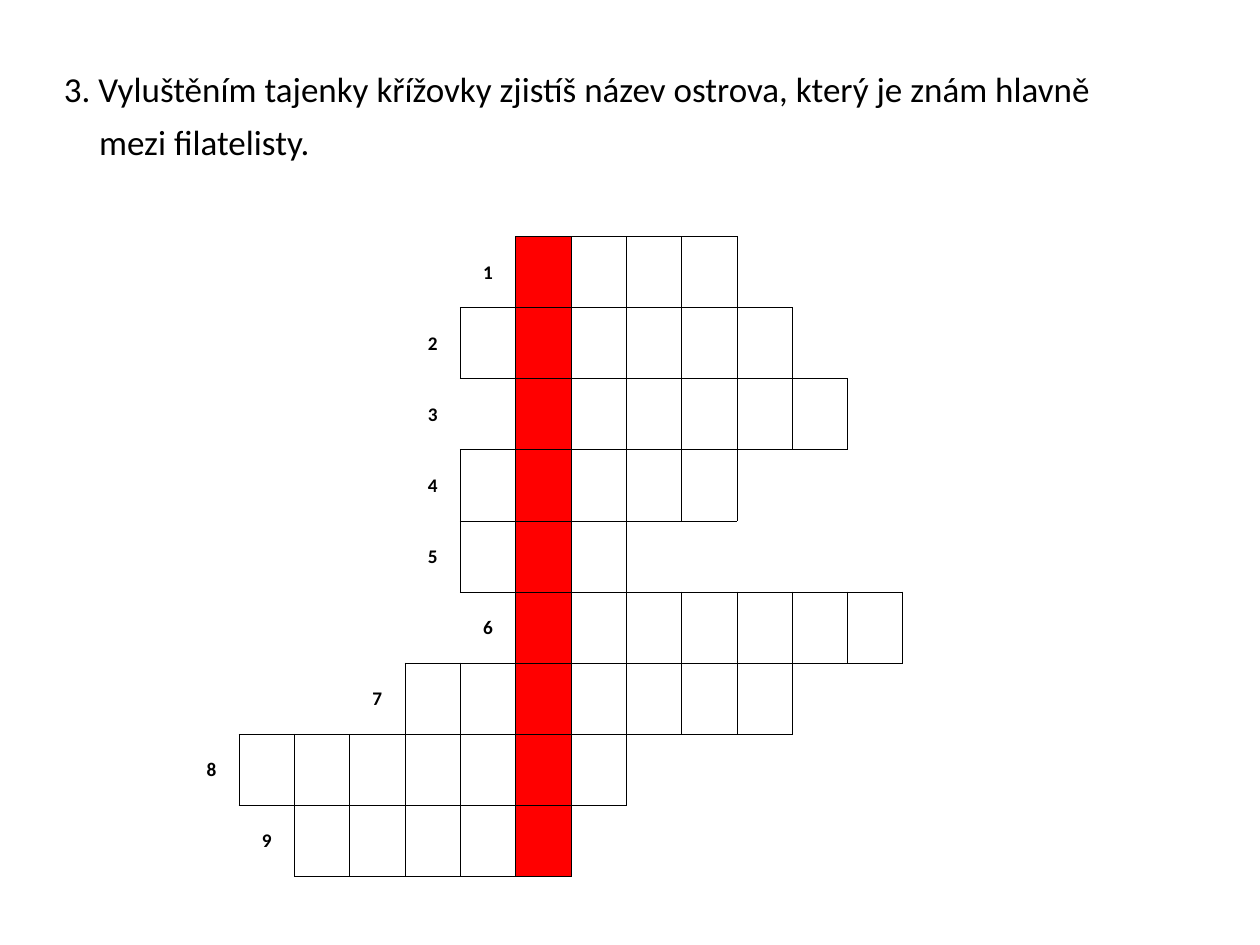
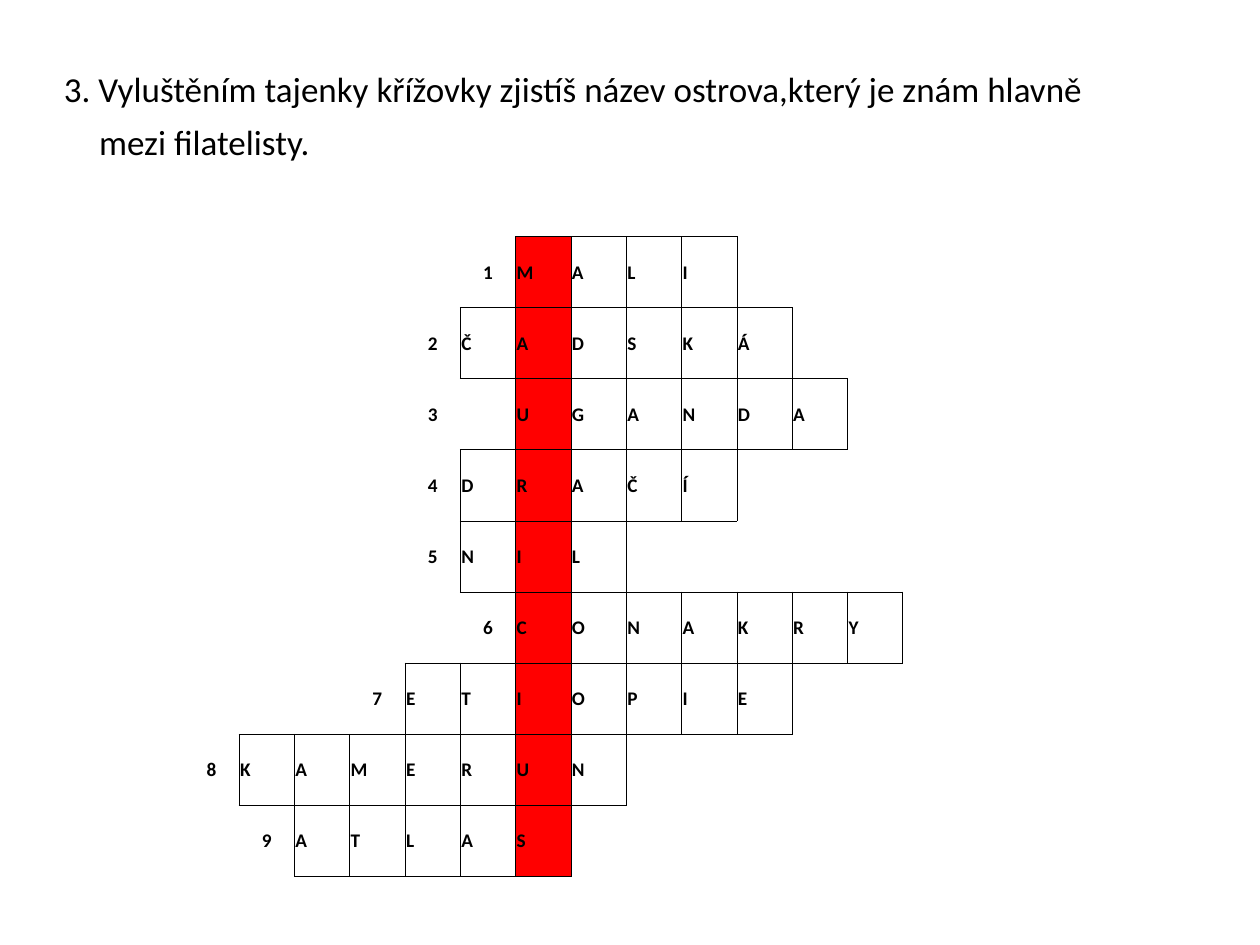
"""Builds a crossword slide and its solution slide."""
from lxml.etree import SubElement as Sub
from pptx import Presentation
from pptx.dml.color import RGBColor
from pptx.enum.text import MSO_ANCHOR as Anchor, PP_ALIGN as Align
from pptx.oxml.ns import qn
from pptx.util import Cm, Pt

NO_GRID_STYLE = "{2D5ABB26-0587-4C30-8999-92F81FD0307C}"
COLUMNS, KEY_COLUMN = 15, 7
SIDES = {"a:lnL": (0, -1), "a:lnR": (0, 1), "a:lnT": (-1, 0), "a:lnB": (1, 0)}

WORD_KEY_DISTANCE = [
    ("MALI", 0, 1), ("ČADSKÁ", 1, 1), ("UGANDA", 0, 2),
    ("DRAČÍ", 1, 1), ("NIL", 1, 1), ("CONAKRY", 0, 1),
    ("ETIOPIE", 2, 1), ("KAMERUN", 5, 1), ("ATLAS", 4, 1),
]
ASSIGNMENTS = [
    ("3. Vyluštěním tajenky křížovky zjistíš název ostrova, který je znám hlavně", False),
    ("3. Vyluštěním tajenky křížovky zjistíš název ostrova,který je znám hlavně", True),
]
ASSIGNMENT_END = "mezi filatelisty."


def color(hex_string):
    return RGBColor.from_string(hex_string)


def assign(target, formats):
    for attribute, value in formats.items():
        setattr(target, attribute, value)


class Worksheet:
    """Holds the style and the current slide."""

    ink, key_fill, font = "000000", "FF0000", "Calibri"
    cell_format = {"vertical_anchor": Anchor.MIDDLE, "margin_left": Cm(0.02),
                   "margin_right": Cm(0.02), "margin_top": Cm(0.02), "margin_bottom": 0}
    assignment_format = {"word_wrap": True, "margin_top": Cm(0.58)}

    def __init__(self):
        self.deck = Presentation()
        assign(self.deck, {"slide_width": Cm(25.4), "slide_height": Cm(19.05)})

    def add_slide(self):
        self.slide = self.deck.slides.add_slide(self.deck.slide_layouts[6])

    def add_text(self, paragraph, text, size, bold=False):
        run = paragraph.add_run()
        run.text = text
        assign(run.font, {"name": self.font, "size": Pt(size), "bold": bold})
        run.font.color.rgb = color(self.ink)

    def add_assignment(self, *lines):
        frame = self.slide.shapes.add_textbox(0, Cm(0.79), Cm(22.86), Cm(16.23)).text_frame
        assign(frame, self.assignment_format)
        first, second = frame.paragraphs[0], frame.add_paragraph()
        second.space_before = Pt(6)
        for paragraph, line, indent in zip((first, second), lines, (1.04, 1.75)):
            paragraph._p.get_or_add_pPr().set("marL", str(Cm(indent)))
            self.add_text(paragraph, line, 20)

    def add_border(self, cell, side, visible):
        border = Sub(cell._tc.get_or_add_tcPr(), qn(side), w=str(Pt(0.5)))
        if visible:
            Sub(Sub(border, qn("a:solidFill")), qn("a:srgbClr"), val=self.ink)
        else:
            Sub(border, qn("a:noFill"))

    def add_crossword(self, answers, solved):
        grid = self.slide.shapes.add_table(
            len(answers), COLUMNS, Cm(2.59), Cm(4.77), Cm(16.74), Cm(12.9))
        table = grid.table
        assign(table, {"first_row": False, "horz_banding": False})
        table._tbl.tblPr.find(qn("a:tableStyleId")).text = NO_GRID_STYLE
        letters, numbers = {}, {}
        for row, (word, key_place, distance) in enumerate(answers):
            start = KEY_COLUMN - key_place
            numbers[row, start - distance] = str(row + 1)
            letters.update({(row, start + i): letter for i, letter in enumerate(word)})
        for row in range(len(answers)):
            for column in range(COLUMNS):
                place, cell = (row, column), table.cell(row, column)
                assign(cell, self.cell_format)
                for side, (down, right) in SIDES.items():
                    neighbour = (row + down, column + right)
                    self.add_border(cell, side, place in letters or neighbour in letters)
                if column == KEY_COLUMN:
                    cell.fill.solid()
                    cell.fill.fore_color.rgb = color(self.key_fill)
                else:
                    cell.fill.background()
                paragraph = cell.text_frame.paragraphs[0]
                if place in numbers:
                    paragraph.alignment = Align.CENTER
                    self.add_text(paragraph, numbers[place], 11, bold=True)
                elif solved and place in letters:
                    self.add_text(paragraph, letters[place], 11, bold=True)


def main():
    worksheet = Worksheet()
    for assignment, solved in ASSIGNMENTS:
        worksheet.add_slide()
        worksheet.add_assignment(assignment, ASSIGNMENT_END)
        worksheet.add_crossword(WORD_KEY_DISTANCE, solved)
    worksheet.deck.save("out.pptx")


if __name__ == "__main__":
    main()
